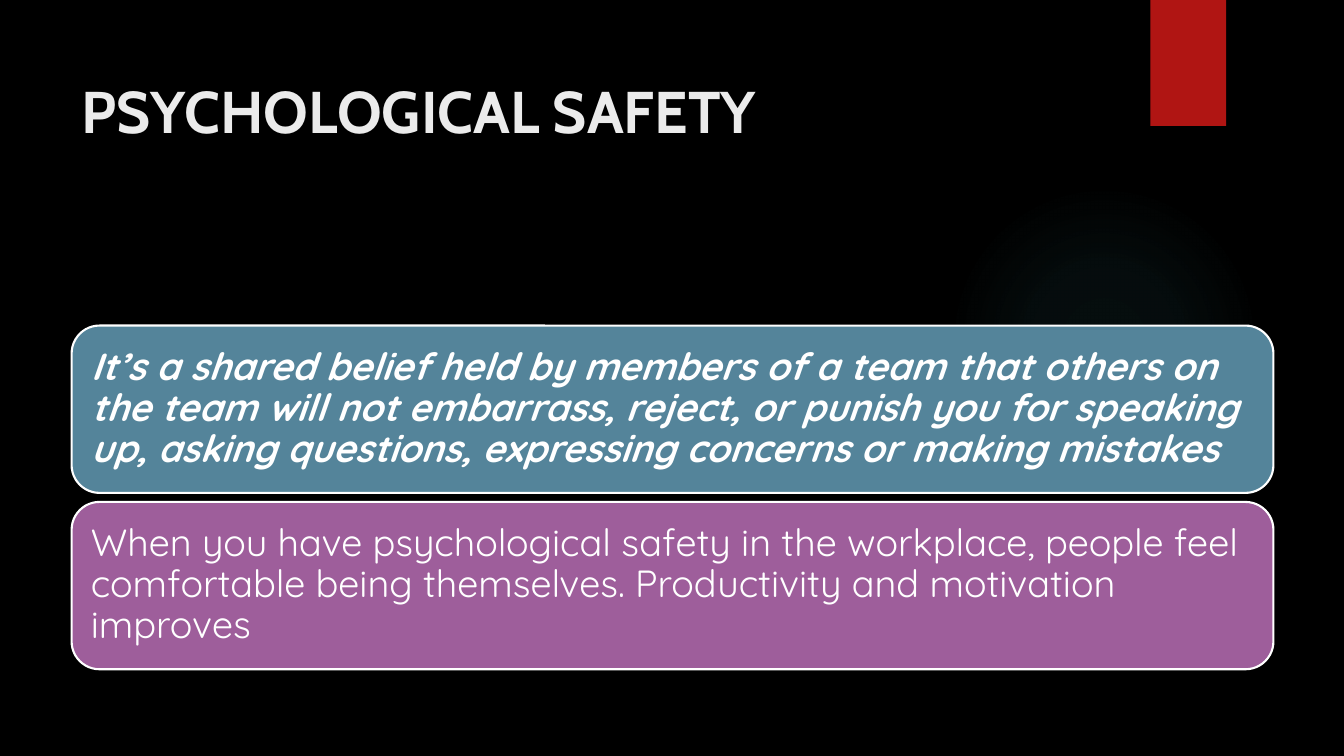
from lxml import etree
from pptx import Presentation
from pptx.dml.color import RGBColor as Rgb
from pptx.enum.shapes import MSO_SHAPE as Kind
from pptx.enum.text import MSO_ANCHOR as Anchor, MSO_AUTO_SIZE as Fit, PP_ALIGN as Align
from pptx.oxml.ns import qn
from pptx.util import Inches, Pt


def tint(text):
    return Rgb.from_string(text)


class Deck:
    """Holds the style and the current slide; boxes are in percent of its size."""
    head, body = "Cabin", "Quicksand"
    white, pale, red, teal = "FFFFFF", "EBEBEB", "B01513", "50B9C1"

    def __init__(self):
        self.prs = Presentation()
        self.prs.slide_width, self.prs.slide_height = Inches(13.33), Inches(7.5)
        self.slide = self.prs.slides.add_slide(self.prs.slide_layouts[5])
        fill = self.slide.background.fill
        fill.solid()
        fill.fore_color.rgb = tint("000000")

    def scale(self, box):
        wide, high = self.prs.slide_width, self.prs.slide_height
        return [int(part * side / 100) for part, side in zip(box, (wide, high) * 2)]

    def shape(self, kind, box, color):
        item = self.slide.shapes.add_shape(kind, *self.scale(box))
        item.shadow.inherit = False
        item.fill.solid()
        item.fill.fore_color.rgb = tint(color)
        item.line.fill.background()
        return item

    def glow(self, box, stops):
        """Add a round fading light; stops are (place, opacity) in percent."""
        item = self.shape(Kind.OVAL, box, self.teal)
        solid = item.element.spPr.find(qn("a:solidFill"))
        grad = etree.Element(qn("a:gradFill"), rotWithShape="1")
        marks = etree.SubElement(grad, qn("a:gsLst"))
        for place, alpha in stops:
            mark = etree.SubElement(marks, qn("a:gs"), pos=str(place * 1000))
            color = etree.SubElement(mark, qn("a:srgbClr"), val=self.teal)
            etree.SubElement(color, qn("a:alpha"), val=str(alpha * 1000))
        round_ = etree.SubElement(grad, qn("a:path"), path="circle")
        etree.SubElement(round_, qn("a:fillToRect"), l="50000", t="50000", r="50000", b="50000")
        solid.getparent().replace(solid, grad)

    def label(self, item, text, face, size, color, anchor, bold=False, slant=False):
        frame = item.text_frame
        frame.text = text
        frame.word_wrap, frame.auto_size = True, Fit.NONE
        frame.vertical_anchor = anchor
        para = frame.paragraphs[0]
        para.alignment = Align.LEFT
        font = para.runs[0].font
        font.name, font.size, font.color.rgb = face, Pt(size), tint(color)
        font.bold, font.italic = bold, slant
        return frame

    def title(self, text, box):
        item = self.slide.shapes.title
        item.left, item.top, item.width, item.height = self.scale(box)
        self.label(item, text, self.head, 42, self.pale, Anchor.TOP, bold=True)

    def card(self, text, box, color, strong):
        item = self.shape(Kind.ROUNDED_RECTANGLE, box, color)
        item.line.color.rgb = tint(self.white)
        item.line.width = Pt(1.5)
        frame = self.label(item, text, self.body, 27, self.white, Anchor.MIDDLE, strong, strong)
        frame.margin_left = frame.margin_right = Inches(0.11)
        frame.margin_top = frame.margin_bottom = Inches(0.11)
        frame.paragraphs[0].line_spacing = 0.9


CARDS = [
    ("It’s a shared belief held by members of a team that others on the team will not "
     "embarrass, reject, or punish you for speaking up, asking questions, expressing "
     "concerns or making mistakes", "54849A", True),
    ("When you have psychological safety in the workplace, people feel comfortable being "
     "themselves. Productivity and motivation improves", "9E5E9B", False),
]


def main():
    left, top, step = 5.33, 43.07, 23.33
    deck = Deck()
    deck.glow((70.6, 24.4, 23.1, 41.07), [(0, 7), (36, 6), (69, 0), (100, 0)])
    deck.shape(Kind.RECTANGLE, (85.6, 0, 5.63, 16.67), deck.red)
    deck.title("PSYCHOLOGICAL SAFETY", (left, 9.2, 75.92, 14.8))
    for row, (text, color, strong) in enumerate(CARDS):
        deck.card(text, (left, top + row * step, 89.42, 22.13), color, strong)
    deck.prs.save("out.pptx")


if __name__ == "__main__":
    main()
